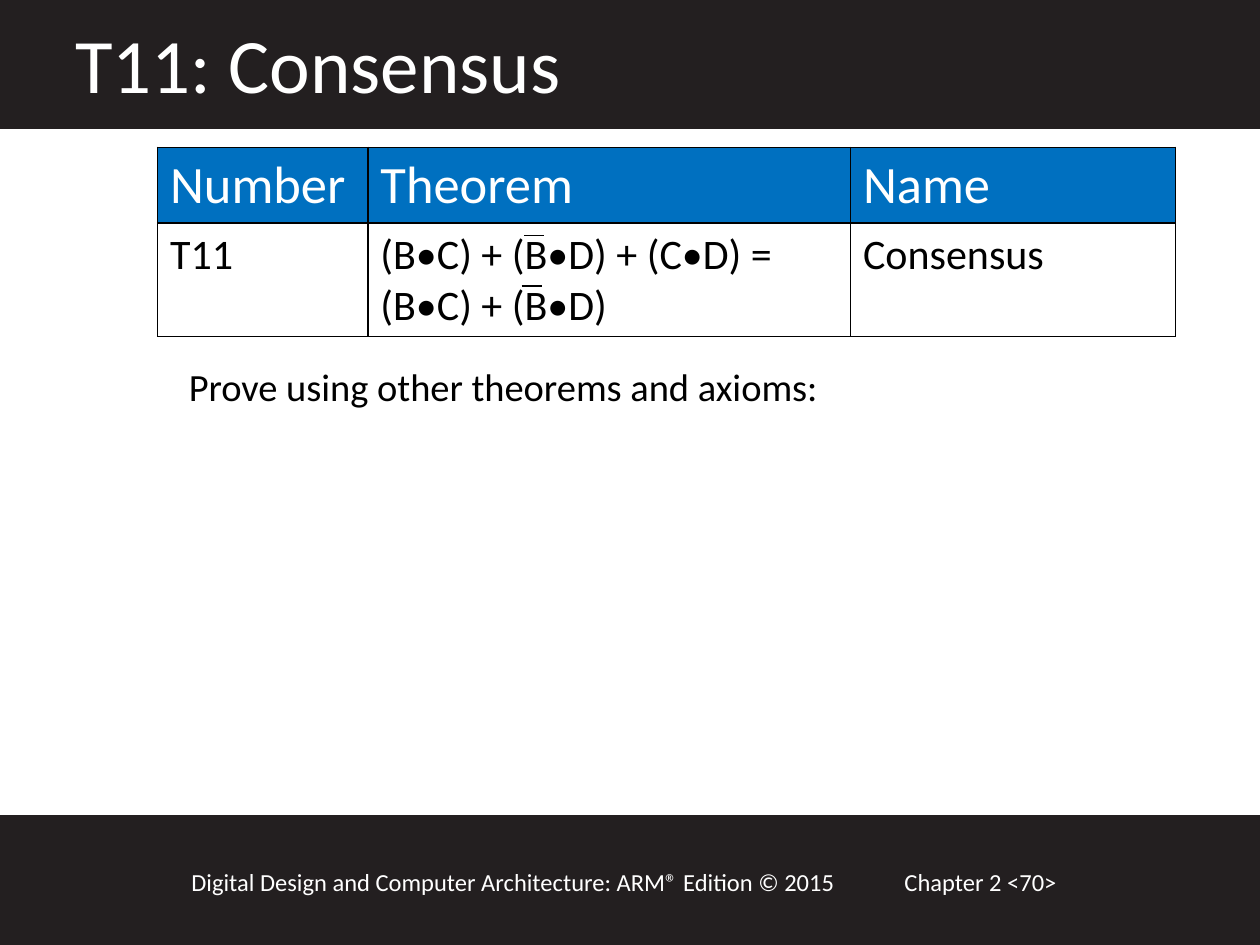
from lxml import etree
from pptx import Presentation
from pptx.dml.color import RGBColor
from pptx.enum import shapes
from pptx.oxml import ns
from pptx.util import Inches, Pt

COLORS = {"band": "231F20", "header": "0070C0", "white": "FFFFFF", "black": "000000"}
FONT = "Calibri"


def color(name):
    """Return the named palette colour."""
    return RGBColor.from_string(COLORS[name])


def write(frame, content, size, ink):
    """Fill a text frame with one paragraph per line of content."""
    frame.word_wrap = True
    for number, line in enumerate(content.split("\n")):
        paragraph = frame.paragraphs[0] if number == 0 else frame.add_paragraph()
        run = paragraph.add_run()
        run.text = line
        run.font.name, run.font.size = FONT, Pt(size)
        run.font.color.rgb = color(ink)


def add_label(slide, box, content, size, ink="white"):
    """Place a text box in the given box."""
    label = slide.shapes.add_textbox(*map(Inches, box))
    write(label.text_frame, content, size, ink)


def add_band(slide, box):
    """Place a dark band in the given box."""
    band = slide.shapes.add_shape(shapes.MSO_SHAPE.RECTANGLE, *map(Inches, box))
    band.shadow.inherit = False
    band.fill.solid()
    band.fill.fore_color.rgb = band.line.color.rgb = color("band")
    band.line.width = Pt(2)


def add_title(slide, box, title):
    """Place the title band and its text."""
    left, top, width, height = box
    add_band(slide, box)
    add_label(slide, (left + 0.5, top + 0.08, 8.67, 0.84), title, 44)


def add_footer(slide, box, book, chapter):
    """Place the footer band with the book and chapter texts."""
    left, top, width, height = box
    add_band(slide, box)
    add_label(slide, (left + 7.08, top + 0.35, 2.17, 0.34), chapter, 14)
    add_label(slide, (left + 1.42, top + 0.35, 5.75, 0.34), book, 14)


def border_cell(cell):
    """Draw a thin black border on each side of a cell."""
    properties = cell._tc.get_or_add_tcPr()
    for position, side in enumerate(("lnL", "lnR", "lnT", "lnB")):
        border = etree.Element(ns.qn(f"a:{side}"), w=str(Pt(1)))
        fill = etree.SubElement(border, ns.qn("a:solidFill"))
        etree.SubElement(fill, ns.qn("a:srgbClr"), val=COLORS["black"])
        properties.insert(position, border)


def add_overbar(slide, left, top, width):
    """Draw the negation bar above a variable."""
    bar = slide.shapes.add_connector(
        shapes.MSO_CONNECTOR.STRAIGHT,
        Inches(left), Inches(top), Inches(left + width), Inches(top))
    bar.line.color.rgb = color("black")
    bar.line.width = Pt(0.75)
    etree.SubElement(bar._element.spPr, ns.qn("a:effectLst"))


def add_theorem(slide, box, rows, widths, heights):
    """Place the theorem table and its negation bars."""
    left, top, width, height = box
    table = slide.shapes.add_table(len(rows), len(widths), *map(Inches, box)).table
    for column, column_width in zip(table.columns, widths):
        column.width = Inches(column_width)
    styles = [("header", 30, "white"), ("white", 24, "black")]
    for r, (values, (fill, size, ink)) in enumerate(zip(rows, styles)):
        table.rows[r].height = Inches(heights[r])
        for c, value in enumerate(values):
            cell = table.cell(r, c)
            cell.fill.solid()
            cell.fill.fore_color.rgb = color(fill)
            write(cell.text_frame, value, size, ink)
            border_cell(cell)
    for x, y in ((2.91, 0.7), (2.89, 1.1)):
        add_overbar(slide, left + x, top + y, 0.16)


def main():
    """Build and save the consensus theorem slide."""
    deck = Presentation()
    deck.slide_width, deck.slide_height = Inches(10), Inches(7.5)
    slide = deck.slides.add_slide(deck.slide_layouts[6])
    add_footer(slide, (0, 6.48, 10, 1.02),
               "Digital Design and Computer Architecture: ARM® Edition © 2015",
               "Chapter 2 <70>")
    add_title(slide, (0, 0, 10, 1.01), "T11: Consensus")
    theorem_rows = [
        ("Number", "Theorem", "Name"),
        ("T11", "(B•C) + (B•D) + (C•D) =\n(B•C) + (B•D)", "Consensus"),
    ]
    add_theorem(slide, (1.25, 1.17, 8.08, 1.5), theorem_rows,
                widths=(1.67, 3.83, 2.58), heights=(0.6, 0.9))
    add_label(slide, (1.4, 2.83, 8.14, 3.55),
              "Prove using other theorems and axioms:", 22, "black")
    deck.save("out.pptx")


if __name__ == "__main__":
    main()
